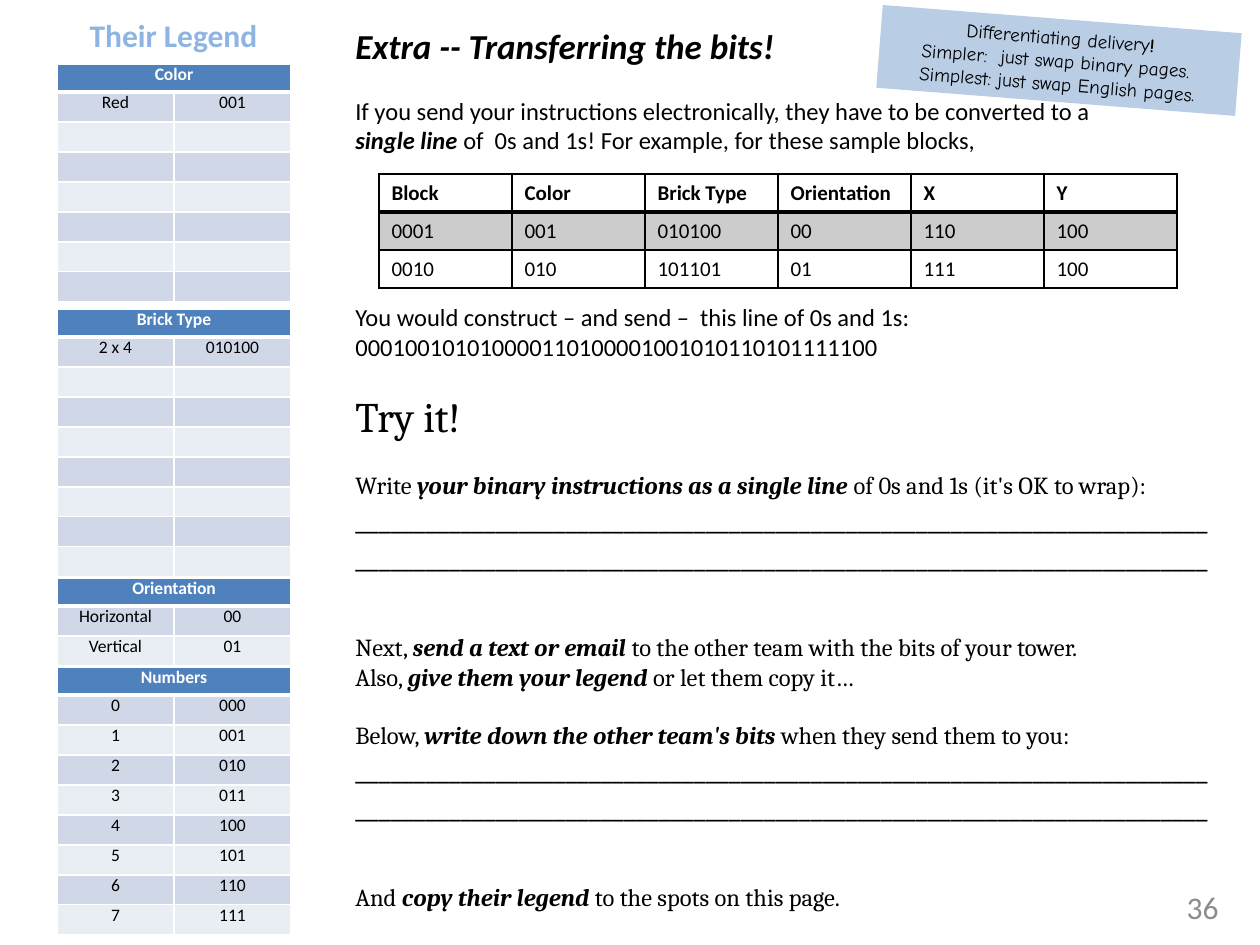
from lxml import etree
from pptx import Presentation
from pptx.dml.color import RGBColor
from pptx.enum.shapes import MSO_SHAPE as Shape
from pptx.enum.text import MSO_ANCHOR as Anchor, PP_ALIGN as Align
from pptx.oxml.ns import qn
from pptx.util import Emu, Pt

PX = 914400 / 126
BLACK = RGBColor(0x00, 0x00, 0x00)
WHITE = RGBColor(0xFF, 0xFF, 0xFF)
HEADER_BLUE = RGBColor(0x4F, 0x81, 0xBD)
BANDS = (RGBColor(0xD0, 0xD8, 0xE8), RGBColor(0xE9, 0xED, 0xF4))
TITLE_BLUE = RGBColor(0x8E, 0xB4, 0xE3)
NOTE_BLUE = RGBColor(0xB9, 0xCD, 0xE5)
PAGE_GREY = RGBColor(0x8C, 0x8C, 0x8C)
SANS, SERIF, HAND = "Calibri", "Cambria", "Comic Neue"
LINE = 16.4  # height of one 14 pt line, in points

BITS = [
    ("Block", "Color", "Brick Type", "Orientation", "X", "Y"),
    ("0001", "001", "010100", "00", "110", "100"),
    ("0010", "010", "101101", "01", "111", "100"),
]
# Top, heading, number of rows below the heading, known entries
LEGENDS = [
    (64, "Color", 7, [("Red", "001")]),
    (309, "Brick Type", 8, [("2 x 4", "010100")]),
    (578, "Orientation", 2, [("Horizontal", "00"), ("Vertical", "01")]),
    (667, "Numbers", 8, [(str(n), f"{n:03b}") for n in range(8)]),
]
BLANKS = "_" * 146


def px(*lengths):
    return [Emu(round(length * PX)) for length in lengths]


def write(paragraph, text, size, face=SANS, color=BLACK, bold=None,
          align=None, before=0):
    """Fill a paragraph; parts between asterisks are bold italic."""
    font = paragraph.font
    font.size, font.name, font.bold = Pt(size), face, bold
    font.color.rgb = color
    paragraph.alignment = align
    if before:
        paragraph.space_before = Pt(before)
    for i, part in enumerate(text.split("*")):
        if part:
            run = paragraph.add_run()
            run.text = part
            if i % 2:
                run.font.bold = run.font.italic = True


def write_all(frame, lines):
    for i, (text, style) in enumerate(lines):
        paragraph = frame.add_paragraph() if i else frame.paragraphs[0]
        write(paragraph, text, **style)


def add_text(slide, box, lines, wrap=True, anchor=Anchor.TOP):
    frame = slide.shapes.add_textbox(*px(*box)).text_frame
    frame.word_wrap = wrap
    frame.vertical_anchor = anchor
    write_all(frame, lines)


def set_borders(cell, color, top=1, bottom=1):
    properties = cell._tc.get_or_add_tcPr()
    sides = (("a:lnL", 1), ("a:lnR", 1), ("a:lnT", top), ("a:lnB", bottom))
    for i, (tag, width) in enumerate(sides):
        line = etree.Element(qn(tag), w=str(Pt(width)))
        fill = etree.SubElement(line, qn("a:solidFill"))
        etree.SubElement(fill, qn("a:srgbClr"), val=str(color))
        properties.insert(i, line)


def add_grid(slide, left, top, column_width, row_heights, columns):
    frame = slide.shapes.add_table(
        len(row_heights), columns,
        *px(left, top, column_width * columns, sum(row_heights)))
    table = frame.table
    table.first_row = table.horz_banding = False
    for column in table.columns:
        column.width, = px(column_width)
    for row, height in zip(table.rows, row_heights):
        row.height, = px(height)
    return table


def add_bits_table(slide):
    table = add_grid(slide, 379, 174, 133, [38] * len(BITS), len(BITS[0]))
    for r, values in enumerate(BITS):
        for c, value in enumerate(values):
            cell = table.cell(r, c)
            write(cell.text_frame.paragraphs[0], value, 12, bold=r == 0)
            if r == 1:
                cell.fill.solid()
                cell.fill.fore_color.rgb = BLACK
                tint = cell._tc.tcPr.find(".//" + qn("a:srgbClr"))
                etree.SubElement(tint, qn("a:alpha"), val="20000")
            else:
                cell.fill.background()
            set_borders(cell, BLACK, top=2 if r == 1 else 1,
                        bottom=2 if r == 0 else 1)


def add_legend(slide, top, heading, row_count, entries):
    table = add_grid(slide, 57, top, 117, [28] + [30] * row_count, 2)
    blank_rows = [("", "")] * (row_count - len(entries))
    for r, values in enumerate([(heading, ""), *entries, *blank_rows]):
        for c, value in enumerate(values):
            cell = table.cell(r, c)
            cell.margin_left = cell.margin_right = 0
            cell.margin_top = cell.margin_bottom = 0
            write(cell.text_frame.paragraphs[0], value, 10, bold=r == 0,
                  color=BLACK if r else WHITE, align=Align.CENTER)
            cell.fill.solid()
            cell.fill.fore_color.rgb = BANDS[(r - 1) % 2] if r else HEADER_BLUE
            set_borders(cell, WHITE, top=3 if r == 1 else 1,
                        bottom=3 if r == 0 else 1)
    table.cell(0, 0).merge(table.cell(0, 1))


def add_note(slide):
    note = slide.shapes.add_shape(Shape.RECTANGLE, *px(879, 19, 360, 83))
    note.rotation = 4.5
    note.shadow.inherit = False
    note.fill.solid()
    note.fill.fore_color.rgb = NOTE_BLUE
    note.line.fill.background()
    style = dict(size=11, face=HAND, align=Align.CENTER)
    write_all(note.text_frame, [
        ("Differentiating delivery", style),
        ("Simpler:  just swap binary pages. ", style),
        ("Simplest: just swap English pages.", style),
    ])
    mark = note.text_frame.paragraphs[0].add_run()
    mark.text = "!"
    mark.font.bold = True


def main():
    prs = Presentation()
    prs.slide_width, prs.slide_height = px(1260, 945)
    slide = prs.slides.add_slide(prs.slide_layouts[6])

    # Introduction and sample blocks
    body = dict(size=14)
    add_text(slide, (343, 18, 766, 183), [
        ("*Extra -- Transferring the bits!*", dict(size=20)),
        ("If you send your instructions electronically, they have to be "
         "converted to a *single line *of  0s and 1s! For example, for these "
         "sample blocks,", dict(size=14, before=17)),
    ])
    add_bits_table(slide)

    # Exercise
    task = dict(size=14, face=SERIF)
    spaced = dict(task, before=LINE)
    far = dict(task, before=2 * LINE)
    answer = dict(size=18, face=SERIF)
    add_text(slide, (343, 296, 881, 633), [
        ("You would construct – and send –  this line of 0s and 1s:", body),
        ("000100101010000110100001001010110101111100", body),
        ("Try it!", dict(size=24, face=SERIF, before=17)),
        ("Write *your binary instructions as a single line *of 0s and 1s "
         "(it's OK to wrap):", spaced),
        (BLANKS, answer),
        ("Next, *send a text or email *to the other team with the bits of "
         "your tower.", far),
        ("Also, *give them your legend *or let them copy it…", task),
        ("Below, *write down the other team's bits *when they send them to "
         "you:", spaced),
        (BLANKS, answer),
        ("And *copy their legend *to the spots on this page.", far),
    ])

    # Page number
    add_text(slide, (937, 882, 294, 50),
             [("36", dict(size=18, color=PAGE_GREY, align=Align.RIGHT))],
             anchor=Anchor.MIDDLE)

    # Legend column
    for legend in LEGENDS:
        add_legend(slide, *legend)
    add_text(slide, (76, 10, 195, 50),
             [("Their Legend", dict(size=18, color=TITLE_BLUE, bold=True,
                                    align=Align.CENTER))], wrap=False)

    add_note(slide)
    prs.save("out.pptx")


if __name__ == "__main__":
    main()
